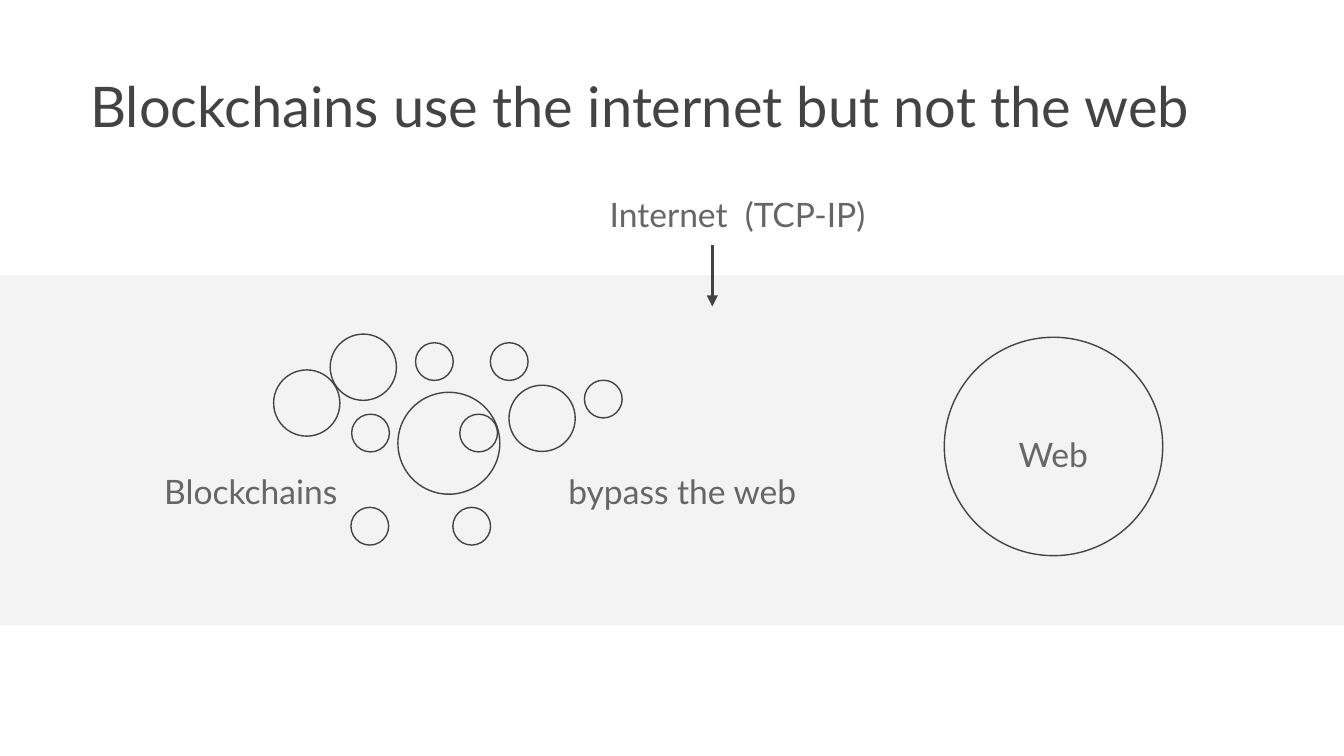
import pptx
import pptx.dml.color
import pptx.enum.shapes
import pptx.enum.text
import pptx.oxml
import pptx.oxml.ns
import pptx.util

Pt = pptx.util.Pt
SHAPE = pptx.enum.shapes.MSO_SHAPE
ALIGN = pptx.enum.text.PP_ALIGN
COLORS = {"band": "F3F3F3", "ink": "434343", "label": "666666"}
TITLE = {"name": "Lato", "size": Pt(30)}
LABEL = {"name": "Lato", "size": Pt(18)}
LABEL_PARAGRAPH = {"line_spacing": 1.15, "space_after": Pt(16)}

SMALL, MEDIUM, LARGE, WEB = 20.2, 35.5, 54.6, 117
BLOCKCHAINS = [  # left, top, diameter
    (242.6, 271.8, SMALL),
    (213.2, 210.2, LARGE),
    (176.9, 179, MEDIUM),
    (222.6, 183.6, SMALL),
    (246.3, 221.9, SMALL),
    (262.7, 183.6, SMALL),
    (272.7, 206.4, MEDIUM),
    (313.1, 203.7, SMALL),
    (188.4, 221.9, SMALL),
    (146.6, 198.2, MEDIUM),
    (188, 271.8, SMALL),
]


class SlideBuilder:
    def __init__(self, slide):
        self.s = slide

    def color(self, name):
        return pptx.dml.color.RGBColor.from_string(COLORS[name])

    def band(self, x, y, w, h):
        sp = self.s.shapes.add_shape(SHAPE.RECTANGLE, Pt(x), Pt(y), Pt(w), Pt(h))
        sp.shadow.inherit = False
        sp.fill.solid()
        sp.fill.fore_color.rgb = self.color("band")
        sp.line.fill.background()

    def circle(self, x, y, d):
        sp = self.s.shapes.add_shape(SHAPE.OVAL, Pt(x), Pt(y), Pt(d), Pt(d))
        sp.shadow.inherit = False
        sp.fill.background()
        sp.line.color.rgb = self.color("ink")
        sp.line.width = Pt(0.75)

    def text(self, text, x, y, w, h, font=LABEL, color="label",
             paragraph=LABEL_PARAGRAPH, align=ALIGN.LEFT):
        tf = self.s.shapes.add_textbox(Pt(x), Pt(y), Pt(w), Pt(h)).text_frame
        tf.word_wrap = True
        for side in ("left", "top", "right", "bottom"):
            setattr(tf, f"margin_{side}", Pt(7.2))
        p = tf.paragraphs[0]
        p.alignment = align
        for key, value in paragraph.items():
            setattr(p, key, value)
        r = p.add_run()
        r.text = text
        for key, value in font.items():
            setattr(r.font, key, value)
        r.font.color.rgb = self.color(color)

    def arrow(self, x1, y1, x2, y2):
        line = self.s.shapes.add_connector(
            pptx.enum.shapes.MSO_CONNECTOR.STRAIGHT, Pt(x1), Pt(y1), Pt(x2), Pt(y2))
        line.line.color.rgb = self.color("ink")
        line.line.width = Pt(1.5)
        make, qn = pptx.oxml.ns.qn, pptx.oxml.ns.qn
        ln = line.line._get_or_add_ln()
        head = ln.makeelement(qn("a:tailEnd"), {"type": "triangle"})
        ln.append(head)
        sp_pr = ln.getparent()
        sp_pr.append(sp_pr.makeelement(make("a:effectLst"), {}))


def main():
    prs = pptx.Presentation()
    prs.slide_width, prs.slide_height = Pt(720), Pt(405)
    b = SlideBuilder(prs.slides.add_slide(prs.slide_layouts[6]))

    b.band(0, 147.6, 720, 187.2)
    b.text("bypass the web", 297.4, 241.9, 139, 35.3)
    b.circle(505.9, 180.7, WEB)
    b.text("Web", 538.6, 221.8, 56, 35.3)
    b.text("Blockchains", 80.9, 241.9, 128.2, 35.3)
    for circle in BLOCKCHAINS:
        b.circle(*circle)
    b.text("Internet  (TCP-IP)", 236.4, 93.6, 317.5, 35.3, align=ALIGN.CENTER)
    b.arrow(381.6, 131, 381.6, 164.2)
    b.text("Blockchains use the internet but not the web", 41.3, 31, 632.9, 45.4,
           font=TITLE, color="ink", paragraph={})
    prs.save("out.pptx")


if __name__ == "__main__":
    main()
